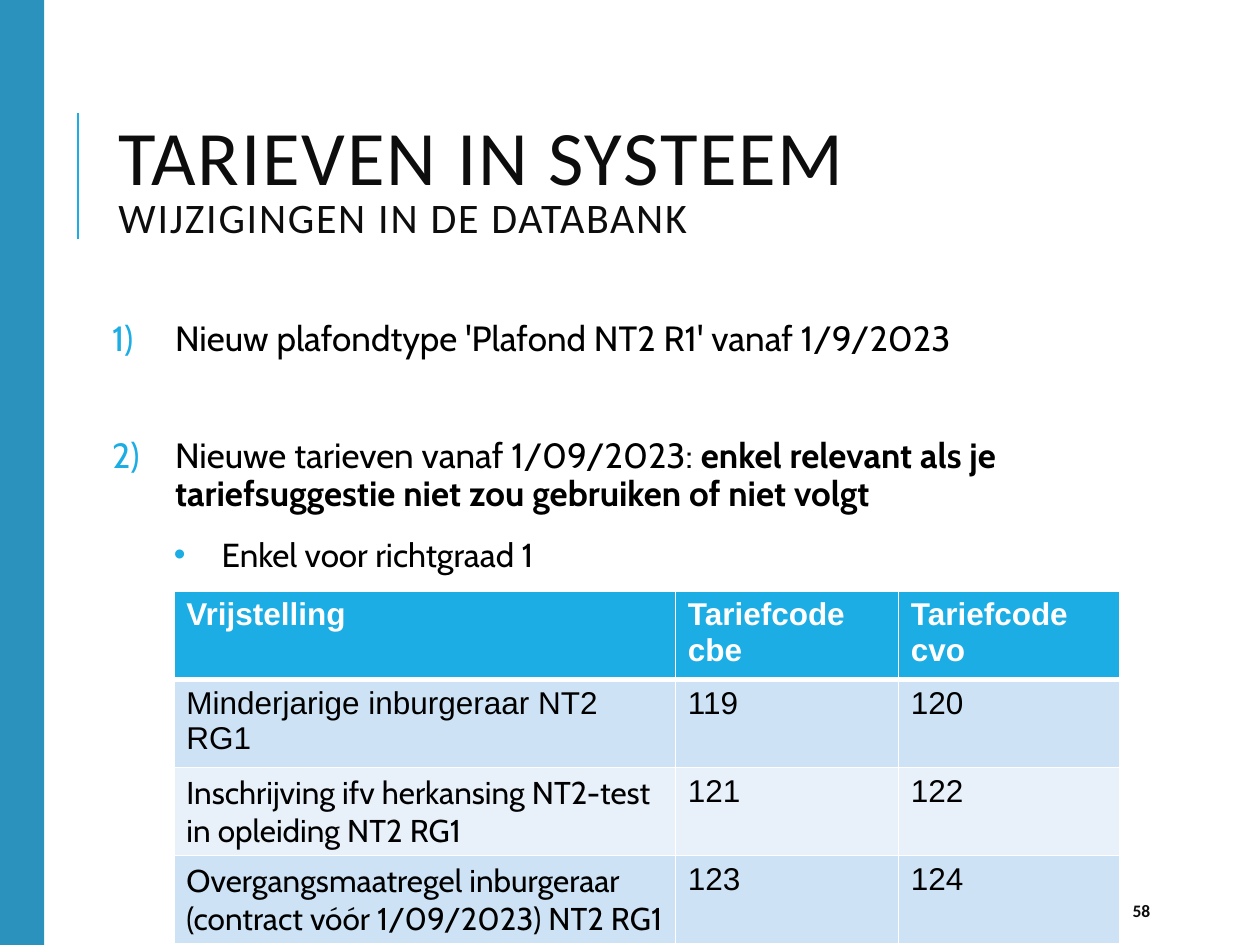
from pptx import Presentation
from pptx.dml.color import RGBColor
from pptx.enum.shapes import MSO_CONNECTOR, MSO_SHAPE
from pptx.enum.text import MSO_ANCHOR, MSO_AUTO_SIZE, PP_ALIGN
from pptx.oxml.ns import qn
from pptx.util import Inches, Pt
from lxml.etree import SubElement

WHITE = RGBColor(0xFF, 0xFF, 0xFF)
BLACK = RGBColor(0, 0, 0)
INK = RGBColor(0x0D, 0x0D, 0x0D)
CYAN = RGBColor(0x1C, 0xAD, 0xE4)
BLUE = RGBColor(0x2B, 0x92, 0xBE)
PALE = RGBColor(0xCD, 0xE3, 0xF5)
MIST = RGBColor(0xE8, 0xF1, 0xFA)

TITLE = ("TARIEVEN IN SYSTEEM", "WIJZIGINGEN IN DE DATABANK")
# mark, indent, hang, space before, size, (text, bold) parts
POINTS = [
    ("1)", 0.5, 0.5, 12, 20,
     [("Nieuw plafondtype 'Plafond NT2 R1' vanaf 1/9/2023", False)]),
    ("2)", 0.5, 0.5, 43.4, 20,
     [("Nieuwe tarieven vanaf 1/09/2023: ", False),
      ("enkel relevant als je tariefsuggestie niet zou gebruiken "
       "of niet volgt", True)]),
    ("•", 0.87, 0.38, 12, 19, [("Enkel voor richtgraad 1", False)]),
]
# font of the first column, cells
ROWS = [
    ("Arial", "Vrijstelling", "Tariefcode cbe", "Tariefcode cvo"),
    ("Arial", "Minderjarige inburgeraar NT2 RG1", "119", "120"),
    ("Cabin", "Inschrijving ifv herkansing NT2-test in opleiding NT2 RG1",
     "121", "122"),
    ("Cabin", "Overgangsmaatregel inburgeraar (contract vóór 1/09/2023) "
     "NT2 RG1", "123", "124"),
]
COLS = (3.98, 1.77, 1.76)


def style(run, name, size, color, bold=False):
    font = run.font
    font.name, font.size, font.bold = name, Pt(size), bold
    font.color.rgb = color


def add_side(slide, wide, high):
    """Draw the colour band and the thin rule beside the title."""
    band = slide.shapes.add_shape(MSO_SHAPE.RECTANGLE, 0, 0, wide, high)
    band.shadow.inherit = False
    band.fill.solid()
    band.fill.fore_color.rgb = BLUE
    band.line.fill.background()
    x = Inches(0.62)
    rule = slide.shapes.add_connector(
        MSO_CONNECTOR.STRAIGHT, x, Inches(1.9), x, Inches(0.9))
    rule.line.color.rgb = CYAN
    rule.line.width = Pt(1.5)
    SubElement(rule._element.spPr, qn("a:effectLst"))


def set_title(slide, box):
    title = slide.shapes.title
    title.left, title.top, title.width, title.height = box
    frame = title.text_frame
    frame.text = "\v".join(TITLE)
    frame.auto_size = MSO_AUTO_SIZE.NONE
    frame.vertical_anchor = MSO_ANCHOR.MIDDLE
    para = frame.paragraphs[0]
    para.alignment = PP_ALIGN.LEFT
    para.line_spacing = 0.8
    for run, size in zip(para.runs, (44, 24)):
        style(run, "Calibri", size, INK)
        run.font._element.set("spc", "100")


def set_mark(para, mark, left, hang):
    """Give a paragraph its hanging indent and its number or bullet."""
    props = para._p.get_or_add_pPr()
    props.set("marL", str(Inches(left)))
    props.set("indent", str(-Inches(hang)))
    tint = SubElement(props, qn("a:buClr"))
    SubElement(tint, qn("a:srgbClr"), val=str(CYAN))
    if mark == "•":
        SubElement(props, qn("a:buFont"), typeface="Arial")
        SubElement(props, qn("a:buChar"), char=mark)
    else:
        SubElement(props, qn("a:buAutoNum"), type="arabicParenR")


def add_points(slide, box):
    frame = slide.shapes.add_textbox(*box).text_frame
    frame.word_wrap = True
    frame.margin_left = frame.margin_right = Inches(0.05)
    for i, (mark, left, hang, gap, size, parts) in enumerate(POINTS):
        para = frame.add_paragraph() if i else frame.paragraphs[0]
        para.line_spacing = 0.9
        para.space_before, para.space_after = Pt(gap), Pt(2)
        set_mark(para, mark, left, hang)
        for text, bold in parts:
            run = para.add_run()
            run.text = text
            style(run, "Cabin", size, BLACK, bold)


def set_edges(cell, head):
    """Draw white cell borders, thicker between head and body."""
    props = cell._tc.get_or_add_tcPr()
    thick = {"B": 3} if head else {}
    for i, side in enumerate("LRTB"):
        edge = props.makeelement(
            qn("a:ln" + side), {"w": str(Pt(thick.get(side, 1)))})
        fill = SubElement(edge, qn("a:solidFill"))
        SubElement(fill, qn("a:srgbClr"), val=str(WHITE))
        props.insert(i, edge)


def add_rates(slide, box):
    table = slide.shapes.add_table(len(ROWS), len(COLS), *box).table
    for col, wide in zip(table.columns, COLS):
        col.width = Inches(wide)
    for r, (face, *texts) in enumerate(ROWS):
        head = r == 0
        for c, text in enumerate(texts):
            cell = table.cell(r, c)
            cell.text_frame.text = text
            style(cell.text_frame.paragraphs[0].runs[0],
                  "Arial" if c else face, 18, WHITE if head else BLACK, head)
            cell.fill.solid()
            cell.fill.fore_color.rgb = CYAN if head else (MIST, PALE)[r % 2]
            set_edges(cell, head)


def add_number(slide, box):
    frame = slide.shapes.add_textbox(*box).text_frame
    frame.word_wrap = True
    frame.vertical_anchor = MSO_ANCHOR.MIDDLE
    frame.text = "58"
    style(frame.paragraphs[0].runs[0], "Calibri", 10, INK, True)


def area(*sides):
    return [Inches(side) for side in sides]


def main():
    deck = Presentation()
    deck.slide_width, deck.slide_height = area(10, 7.5)
    slide = deck.slides.add_slide(deck.slide_layouts[5])
    add_side(slide, Inches(0.35), deck.slide_height)
    set_title(slide, area(0.84, 0.64, 7.97, 1.64))
    add_points(slide, area(0.84, 2.5, 7.97, 4.4))
    add_number(slide, area(8.89, 7.08, 0.8, 0.3))
    add_rates(slide, area(1.38, 4.69, sum(COLS), 2.21))
    deck.save("out.pptx")


if __name__ == "__main__":
    main()
